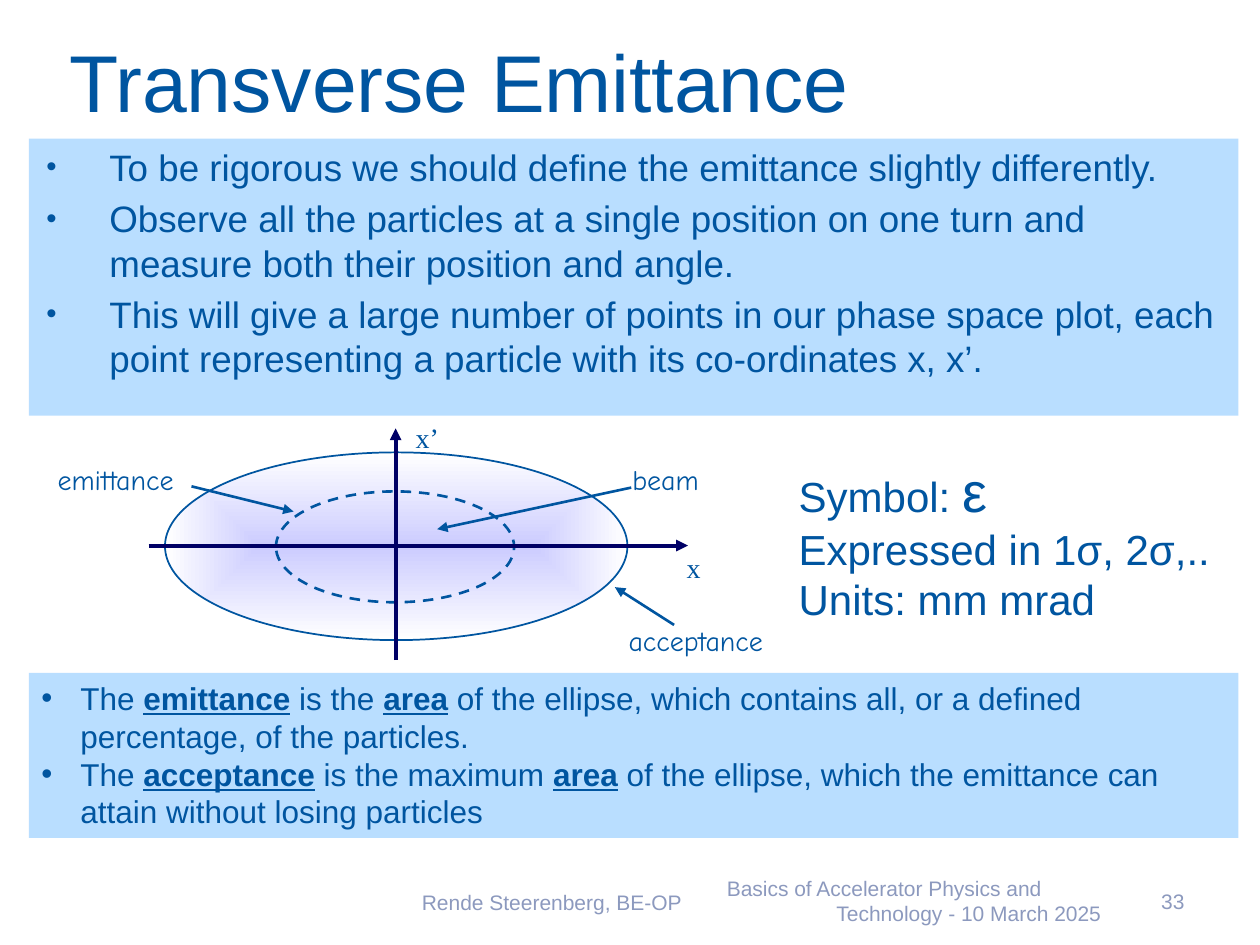
"""Build the slide on transverse emittance."""
import dataclasses

import lxml.etree
import pptx
import pptx.dml.color
import pptx.enum.dml
import pptx.enum.shapes
import pptx.enum.text
import pptx.oxml.ns
import pptx.util

UNIT = 9144
ALIGN = pptx.enum.text.PP_ALIGN
ANCHOR = pptx.enum.text.MSO_ANCHOR
SHAPE = pptx.enum.shapes.MSO_SHAPE
BOLD = {"bold": True, "underline": True}


@dataclasses.dataclass(frozen=True)
class Theme:
    """Hold the colours, fonts and type sizes."""
    ink: str = "0055A0"
    axis: str = "000066"
    panel: str = "B9DEFF"
    core: str = "CCCCFF"
    edge: str = "FFFFFF"
    muted: str = "8C99BE"
    sans: str = "Arial"
    hand: str = "Comic Neue"
    serif: str = "Times New Roman"
    title: int = 46
    body: int = 21
    fact: int = 24
    symbol: int = 32
    note: int = 18
    label: int = 16
    foot: int = 12


LOOK = Theme()


def px(*nums):
    """Turn px lengths into EMU."""
    return [pptx.util.Emu(num * UNIT) for num in nums]


def rgb(code):
    """Turn a hex code into a colour."""
    return pptx.dml.color.RGBColor.from_string(code)


def shift(box, left, top, *size):
    """Place px relative to a box and give EMU."""
    return px(box[0] + left, box[1] + top, *size)


def add(parent, tag, **attrs):
    """Append a drawing element."""
    node = lxml.etree.SubElement(parent, pptx.oxml.ns.qn(tag))
    for key, val in attrs.items():
        node.set(key, str(val))
    return node


def bullet(para, hang, left, scale):
    """Give a paragraph a hanging bullet."""
    props = para._p.get_or_add_pPr()
    props.set("marL", str(left * UNIT))
    props.set("indent", str(-hang * UNIT))
    add(add(props, "a:buClr"), "a:srgbClr", val=LOOK.ink)
    add(props, "a:buSzPct", val=scale * 1000)
    add(props, "a:buFont", typeface=LOOK.sans)
    add(props, "a:buChar", char="•")


def write(frame, lines, size, face=LOOK.sans, color=LOOK.ink, aligns=(ALIGN.LEFT,),
          anchor=ANCHOR.TOP, wrap=True, grow=False, gap=0, mark=None, dot=None):
    """Fill a frame with lines, where text between asterisks takes the mark format."""
    frame.word_wrap = wrap
    frame.vertical_anchor = anchor
    fit = pptx.enum.text.MSO_AUTO_SIZE
    frame.auto_size = fit.SHAPE_TO_FIT_TEXT if grow else fit.NONE
    for num, line in enumerate(lines):
        para = frame.add_paragraph() if num else frame.paragraphs[0]
        if dot:
            bullet(para, *dot)
        para.alignment = aligns[num % len(aligns)]
        para.space_before = pptx.util.Pt(gap if num else 0)
        for part, text in enumerate(line.split("*")):
            if not text:
                continue
            run = para.add_run()
            run.text = text
            font = run.font
            font.name, font.size = face, pptx.util.Pt(size)
            font.color.rgb = rgb(color)
            if part % 2:
                for key, val in mark.items():
                    setattr(font, key, val)


def label(shapes, place, lines, size, **form):
    """Add a text box."""
    write(shapes.add_textbox(*place).text_frame, lines, size, **form)


def panel(shapes, box, lines, size, **form):
    """Add a filled panel of bullets."""
    rect = shapes.add_shape(SHAPE.RECTANGLE, *px(*box))
    rect.shadow.inherit = False
    rect.fill.solid()
    rect.fill.fore_color.rgb = rgb(LOOK.panel)
    rect.line.fill.background()
    write(rect.text_frame, lines, size, **form)


def arrow(shapes, start, end, color, width):
    """Add a straight arrow."""
    kind = pptx.enum.shapes.MSO_CONNECTOR.STRAIGHT
    link = shapes.add_connector(kind, *start, *end)
    link.line.color.rgb = rgb(color)
    link.line.width = pptx.util.Pt(width)
    add(link.line._get_or_add_ln(), "a:tailEnd", type="triangle")
    add(link._element.spPr, "a:effectLst")


def oval(shapes, place, width):
    """Add an outlined ellipse without fill."""
    ring = shapes.add_shape(SHAPE.OVAL, *place)
    ring.shadow.inherit = False
    ring.fill.background()
    ring.line.color.rgb = rgb(LOOK.ink)
    ring.line.width = pptx.util.Pt(width)
    return ring


def glow(ring):
    """Shade an ellipse from its centre to its edge."""
    ring.fill.gradient()
    for stop, color, spot in zip(ring.fill.gradient_stops, (LOOK.core, LOOK.edge), (0, 1)):
        stop.color.rgb = rgb(color)
        stop.position = spot
    grad = ring._element.spPr.find(pptx.oxml.ns.qn("a:gradFill"))
    grad.remove(grad.find(pptx.oxml.ns.qn("a:lin")))
    centre = dict.fromkeys("ltrb", 50000)
    add(add(grad, "a:path", path="shape"), "a:fillToRect", **centre)


def diagram(slide, box):
    """Draw the phase space ellipses with axes and labels."""
    shapes = slide.shapes.add_group_shape().shapes
    glow(oval(shapes, shift(box, 95, 30, 367, 149), 1))
    inner = oval(shapes, shift(box, 183, 61, 189, 88), 1.5)
    inner.line.dash_style = pptx.enum.dml.MSO_LINE.DASH
    axes = [((82, 104), (510, 104)), ((278, 195), (278, 11))]
    hints = [((465, 58), (311, 91)), ((116, 57), (197, 77)), ((499, 167), (452, 137))]
    for pairs, color, width in ((axes, LOOK.axis, 2.25), (hints, LOOK.ink, 1.5)):
        for start, end in pairs:
            arrow(shapes, shift(box, *start), shift(box, *end), color, width)
    names = [("beam", 456, 33, 74, LOOK.hand), ("x’", 284, 0, 39, LOOK.serif),
             ("x", 499, 103, 31, LOOK.serif), ("emittance", 0, 33, 123, LOOK.hand),
             ("acceptance", 453, 161, 136, LOOK.hand)]
    for text, left, top, width, face in names:
        label(shapes, shift(box, left, top, width, 37), [text], LOOK.label,
              face=face, wrap=False, grow=True)


def heading(slide, box):
    """Place and fill the title."""
    title = slide.shapes.title
    title.left, title.top, title.width, title.height = px(*box)
    frame = title.text_frame
    frame.margin_left = frame.margin_right = px(5)[0]
    write(frame, ["Transverse Emittance"], LOOK.title, anchor=ANCHOR.MIDDLE)


def footer(slide, box):
    """Place the author, the event and the page number."""
    parts = [(0, 1, 233, ["Rende Steerenberg, BE-OP"], [ALIGN.LEFT]),
             (242, 0, 317, ["Basics of Accelerator Physics and",
                            "Technology - 10 March 2025"], [ALIGN.LEFT, ALIGN.RIGHT]),
             (570, 0, 55, ["33"], [ALIGN.RIGHT])]
    for left, top, width, lines, aligns in parts:
        label(slide.shapes, shift(box, left, top, width, 40), lines, LOOK.foot,
              color=LOOK.muted, aligns=aligns, anchor=ANCHOR.MIDDLE)


def main():
    """Build and save the deck."""
    deck = pptx.Presentation()
    deck.slide_width, deck.slide_height = px(1000, 750)
    slide = deck.slides.add_slide(deck.slide_layouts[5])
    heading(slide, (50, 12, 900, 103))
    panel(slide.shapes, (23, 110, 960, 220), [
        "To be rigorous we should define the emittance slightly differently.",
        "Observe all the particles at a single position on one turn and measure both "
        "their position and angle.",
        "This will give a large number of points in our phase space plot, each point "
        "representing a particle with its co-ordinates x, x’.",
    ], LOOK.body, gap=4.2, dot=(50, 54, 80))
    footer(slide, (325, 695, 625, 40))
    diagram(slide, (36, 329, 589, 195))
    panel(slide.shapes, (23, 534, 960, 131), [
        "The *emittance* is the *area* of the ellipse, which contains all, or a defined "
        "percentage, of the particles.",
        "The *acceptance* is the maximum *area* of the ellipse, which the emittance can "
        "attain without losing particles",
    ], LOOK.note, grow=True, mark=BOLD, dot=(31, 31, 100))
    label(slide.shapes, px(624, 357, 359, 145),
          ["Symbol: *ε*", "Expressed in 1σ, 2σ,..", "Units: mm mrad"], LOOK.fact,
          grow=True, mark={"size": pptx.util.Pt(LOOK.symbol)})
    deck.save("out.pptx")


if __name__ == "__main__":
    main()
